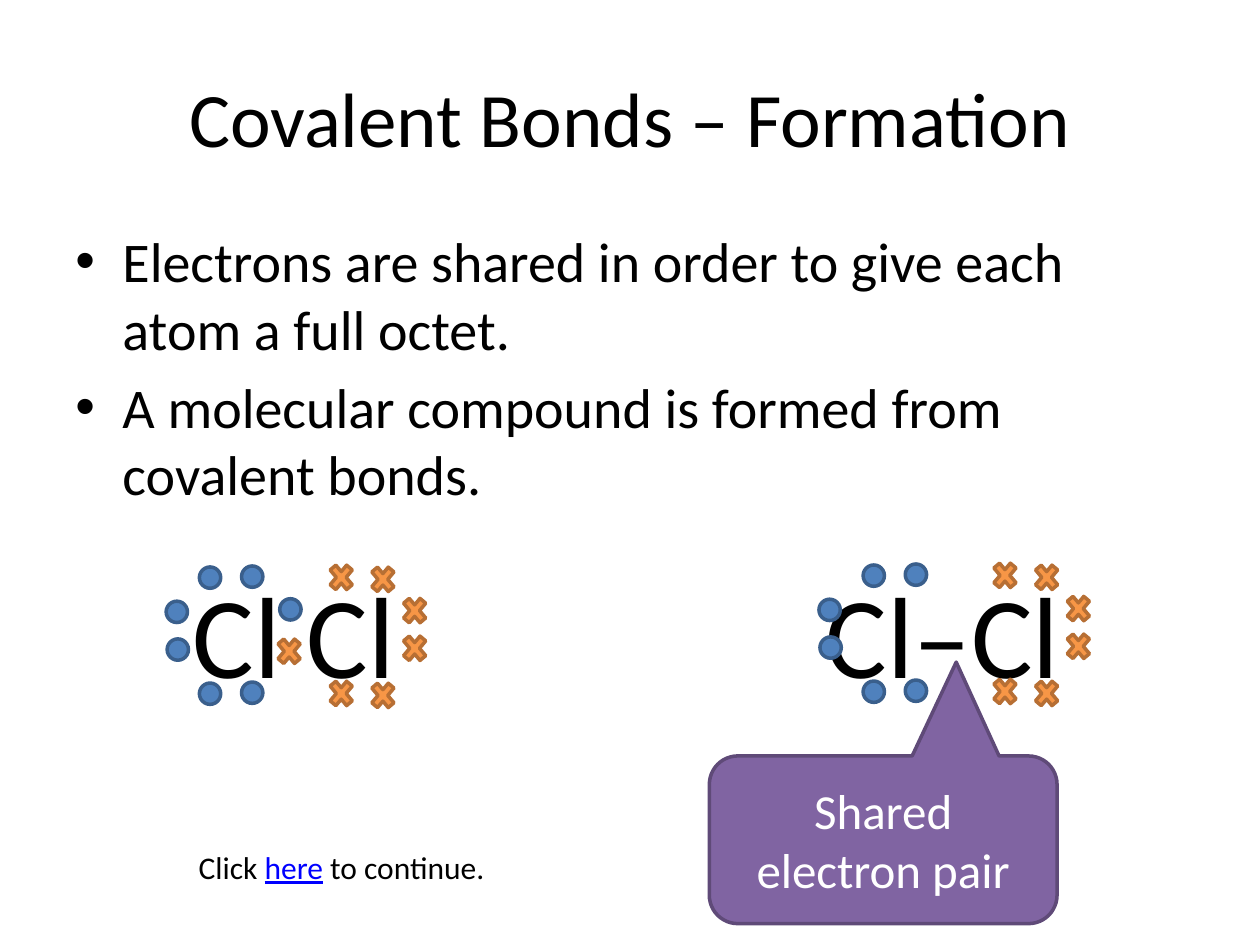
import pptx
import pptx.util
import pptx.dml.color
import pptx.enum.shapes
import pptx.enum.text
import pptx.oxml.ns
import lxml.etree

Cm = pptx.util.Cm
Pt = pptx.util.Pt
Kind = pptx.enum.shapes.MSO_SHAPE
Align = pptx.enum.text.PP_ALIGN
Anchor = pptx.enum.text.MSO_ANCHOR
Fit = pptx.enum.text.MSO_AUTO_SIZE

TITLE = "Covalent Bonds – Formation"
POINTS = [
    "Electrons are shared in order to give each atom a full octet.",
    "A molecular compound is formed from covalent bonds.",
]
NOTE = "Shared electron pair"
PROMPT = [("Click ", {}), ("here", {"color": "0000FF", "underline": True}),
          (" to continue.", {})]

DOT = {"kind": Kind.OVAL, "size": (0.43, 0.43), "fill": "4F81BD", "line": "3A5F8C"}
CROSS = {"kind": Kind.MATH_MULTIPLY, "size": (0.64, 0.76), "fill": "F79646", "line": "B76F34"}
DROP = 2.34
ABOVE = {"dot": [(2.12, 0.2), (2.97, 0.18)], "cross": [(4.66, 0.03), (5.5, 0.07)]}
LEFT = [(1.45, 0.89), (1.47, 1.65)]
RIGHT = [(6.14, 0.7), (6.14, 1.46)]
BOND = {"dot": [(3.74, 0.84)], "cross": [(3.61, 1.52)]}
PAIRS = [
    {"text": "Cl Cl", "left": 1.9, "shift": (0, 0), "nudge": 0, "bond": BOND},
    {"text": "Cl–Cl ", "left": 15.24, "shift": (0.04, -0.04), "nudge": -0.22,
     "bond": {"dot": [], "cross": []}},
]
ROW = 11.23


def shade(code):
    return pptx.dml.color.RGBColor.from_string(code)


def style(part, form):
    for name, value in form.items():
        setattr(part, name, value)


def write(para, runs, size, color="000000"):
    for text, form in runs:
        run = para.add_run()
        run.text = text
        form = {"name": "Calibri", "size": Pt(size), "color": color, **form}
        run.font.color.rgb = shade(form.pop("color"))
        style(run.font, form)


def label(home, box, lines, size, align=Align.CENTER, **form):
    area = home.add_textbox(*map(Cm, box))
    frame = area.text_frame
    style(frame, {"word_wrap": True, **form})
    for i, runs in enumerate(lines):
        para = frame.paragraphs[0] if i == 0 else frame.add_paragraph()
        para.alignment = align
        write(para, runs, size)
    return frame


def solid(home, kind, box, fill, line):
    form = home.add_shape(kind, *map(Cm, box))
    form.shadow.inherit = False
    form.fill.solid()
    form.fill.fore_color.rgb = shade(fill)
    form.line.color.rgb = shade(line)
    form.line.width = Pt(2)
    return form


def bullet(para):
    para.space_before = Pt(6.4)
    props = para._p.get_or_add_pPr()
    props.set("marL", str(Cm(0.95)))
    props.set("indent", str(-Cm(0.95)))
    tag = pptx.oxml.ns.qn
    lxml.etree.SubElement(props, tag("a:buFont")).set("typeface", "Arial")
    lxml.etree.SubElement(props, tag("a:buChar")).set("char", "•")


def lone(spots):
    return spots + [(x, y + DROP) for x, y in spots]


def bonded(slide, pair):
    group = slide.shapes.add_group_shape().shapes
    label(group, (pair["left"], ROW, 8.05, 3.08), [[(pair["text"], {})]], 66,
          auto_size=Fit.SHAPE_TO_FIT_TEXT)
    side = [(x + pair["nudge"], y) for x, y in LEFT]
    dots = lone(ABOVE["dot"]) + side + pair["bond"]["dot"]
    marks = lone(ABOVE["cross"]) + RIGHT + pair["bond"]["cross"]
    dx, dy = pair["shift"]
    for look, spots in ((DOT, dots), (CROSS, marks)):
        for x, y in spots:
            box = (pair["left"] + dx + x, ROW + dy + y, *look["size"])
            solid(group, look["kind"], box, look["fill"], look["line"])


def main():
    deck = pptx.Presentation()
    style(deck, {"slide_width": Cm(25.4), "slide_height": Cm(19.05)})
    slide = deck.slides.add_slide(deck.slide_layouts[6])
    home = slide.shapes

    label(home, (1.27, 0.76, 22.86, 3.18), [[(TITLE, {})]], 44,
          vertical_anchor=Anchor.MIDDLE)
    body = label(home, (1.27, 4.45, 22.86, 12.57), [[(text, {})] for text in POINTS],
                 32, Align.LEFT)
    for para in body.paragraphs:
        bullet(para)

    for pair in PAIRS:
        bonded(slide, pair)

    call = solid(home, Kind.ROUNDED_RECTANGULAR_CALLOUT, (14.3, 15.24, 7.01, 3.38),
                 "8064A2", "5F4A78")
    for i, value in enumerate((0.21, -1.06, 0.17)):
        call.adjustments[i] = value
    style(call.text_frame, {"word_wrap": True, "vertical_anchor": Anchor.MIDDLE})
    para = call.text_frame.paragraphs[0]
    para.alignment = Align.CENTER
    write(para, [(NOTE, {})], 28, "FFFFFF")

    label(home, (0, 16.97, 13.77, 1.02), [PROMPT], 18, auto_size=Fit.SHAPE_TO_FIT_TEXT)
    deck.save("out.pptx")


if __name__ == "__main__":
    main()
